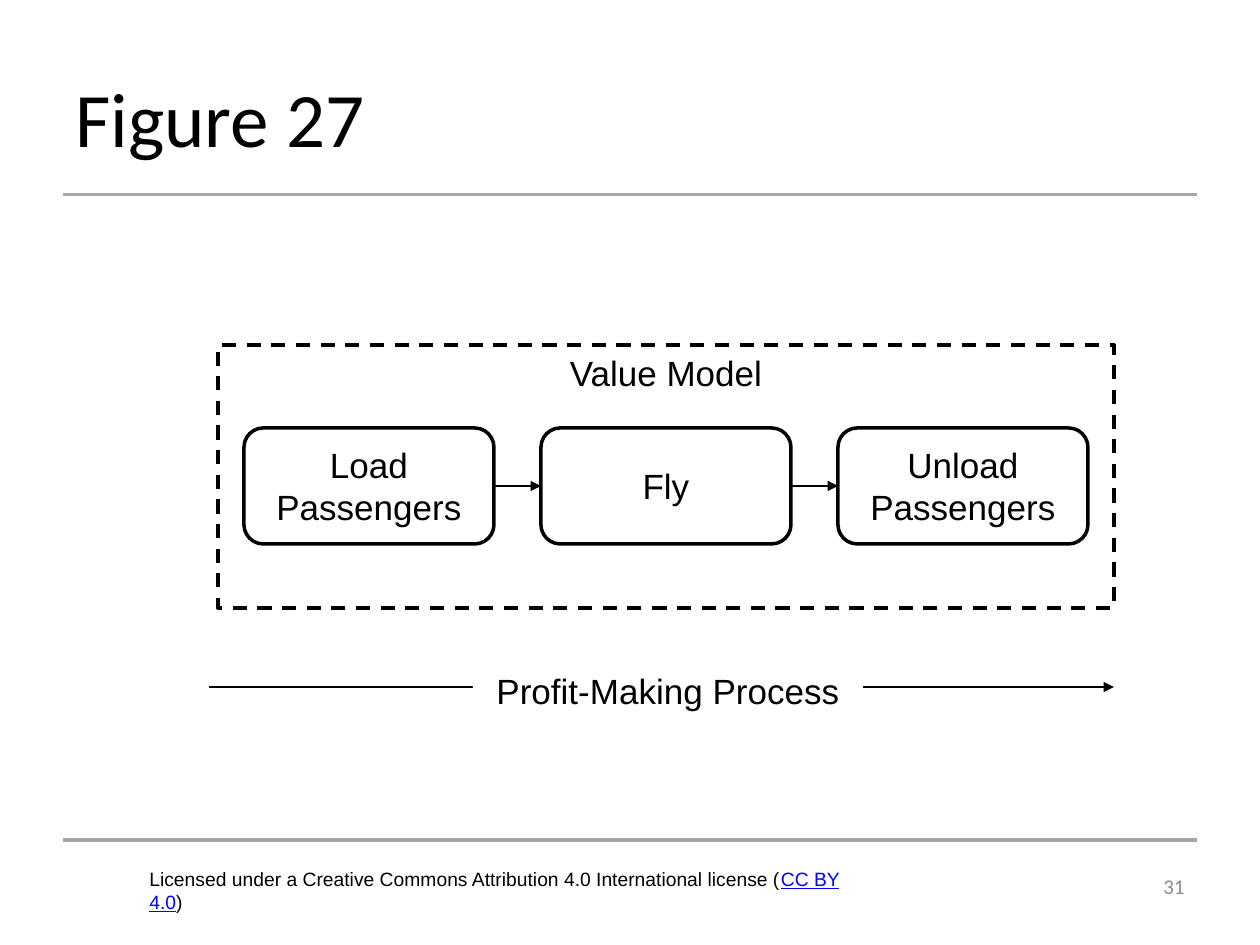
from lxml import etree
from pptx import Presentation
from pptx import util as u
from pptx.dml.color import RGBColor
from pptx.enum import dml, shapes, text
from pptx.oxml.ns import qn

SCALE = 914400 / 126
BLACK, GRAY, WHITE = "000000", "A6A6A6", "FFFFFF"
MID, TOP = text.MSO_ANCHOR.MIDDLE, text.MSO_ANCHOR.TOP
LEFT, MIDST, RIGHT = text.PP_ALIGN.LEFT, text.PP_ALIGN.CENTER, text.PP_ALIGN.RIGHT
RECT, ROUND = shapes.MSO_SHAPE.RECTANGLE, shapes.MSO_SHAPE.ROUNDED_RECTANGLE


def px(*vals):
    return [u.Emu(round(v * SCALE)) for v in vals]


def color(code):
    return RGBColor.from_string(code)


class Deck:
    """Holds the style and the current slide, and draws each kind of element."""

    def __init__(self, wide, high):
        self.prs = Presentation()
        self.prs.slide_width, self.prs.slide_height = px(wide, high)
        self.slide = self.prs.slides.add_slide(self.prs.slide_layouts[6])
        self.font, self.size = "Arial", 20

    def put(self, shape, runs, size=None, font=None, align=LEFT, anchor=TOP):
        frame = shape.text_frame
        frame.word_wrap = True
        frame.vertical_anchor = anchor
        para = frame.paragraphs[0]
        para.alignment = align
        for words, code, under in runs:
            run = para.add_run()
            run.text = words
            run.font.name = font or self.font
            run.font.size = u.Pt(size or self.size)
            run.font.color.rgb = color(code)
            run.font.underline = under

    def label(self, box, runs, **style):
        shape = self.slide.shapes.add_textbox(*px(*box))
        self.put(shape, runs, **style)

    def block(self, kind, box, words, fill=None, line=BLACK, dash=False, anchor=TOP):
        shape = self.slide.shapes.add_shape(kind, *px(*box))
        shape.shadow.inherit = False
        if fill:
            shape.fill.solid()
            shape.fill.fore_color.rgb = color(fill)
        else:
            shape.fill.background()
        if line:
            shape.line.color.rgb = color(line)
            shape.line.width = u.Pt(2)
        else:
            shape.line.fill.background()
        if dash:
            shape.line.dash_style = dml.MSO_LINE.DASH
        self.put(shape, [(words, BLACK, False)], align=MIDST, anchor=anchor)
        return shape

    def line(self, ends, code=BLACK, width=0.75, arrow=False):
        link = self.slide.shapes.add_connector(shapes.MSO_CONNECTOR.STRAIGHT, *px(*ends))
        link.line.color.rgb = color(code)
        link.line.width = u.Pt(width)
        props = link._element.spPr
        if arrow:
            etree.SubElement(props.get_or_add_ln(), qn("a:tailEnd"), type="triangle")
        etree.SubElement(props, qn("a:effectLst"))
        return link

    def join(self, start, end):
        link = self.line((0, 0, 0, 0), arrow=True)
        link.begin_connect(start, 3)
        link.end_connect(end, 1)


def main():
    deck = Deck(1260, 945)
    for y in (840, 195):
        deck.line((63, y, 1197, y), GRAY, 1.75)
    deck.label((137, 861, 753, 37), [
        ("Licensed under a Creative Commons Attribution 4.0 International license (", BLACK, False),
        ("CC BY 4.0", "0000FF", True),
        (")", BLACK, False),
    ], size=11)
    deck.label((63, 38, 1134, 158), [("Figure 27", BLACK, False)],
               size=44, font="Calibri", anchor=MID)
    deck.label((966, 861, 231, 50), [("31", "8C8C8C", False)],
               size=12, font="Calibri", align=RIGHT, anchor=MID)

    deck.line((209, 687, 1114, 687), arrow=True)
    deck.block(RECT, (473, 663, 390, 60), "Profit-Making Process", fill=WHITE, line=None)
    deck.block(RECT, (218, 345, 896, 263), "Value Model", dash=True)

    names = ("Load Passengers", "Fly", "Unload Passengers")
    steps = [deck.block(ROUND, (244 + 297 * i, 428, 250, 116), name, anchor=MID)
             for i, name in enumerate(names)]
    for start, end in zip(steps, steps[1:]):
        deck.join(start, end)

    deck.prs.save("out.pptx")


if __name__ == "__main__":
    main()
